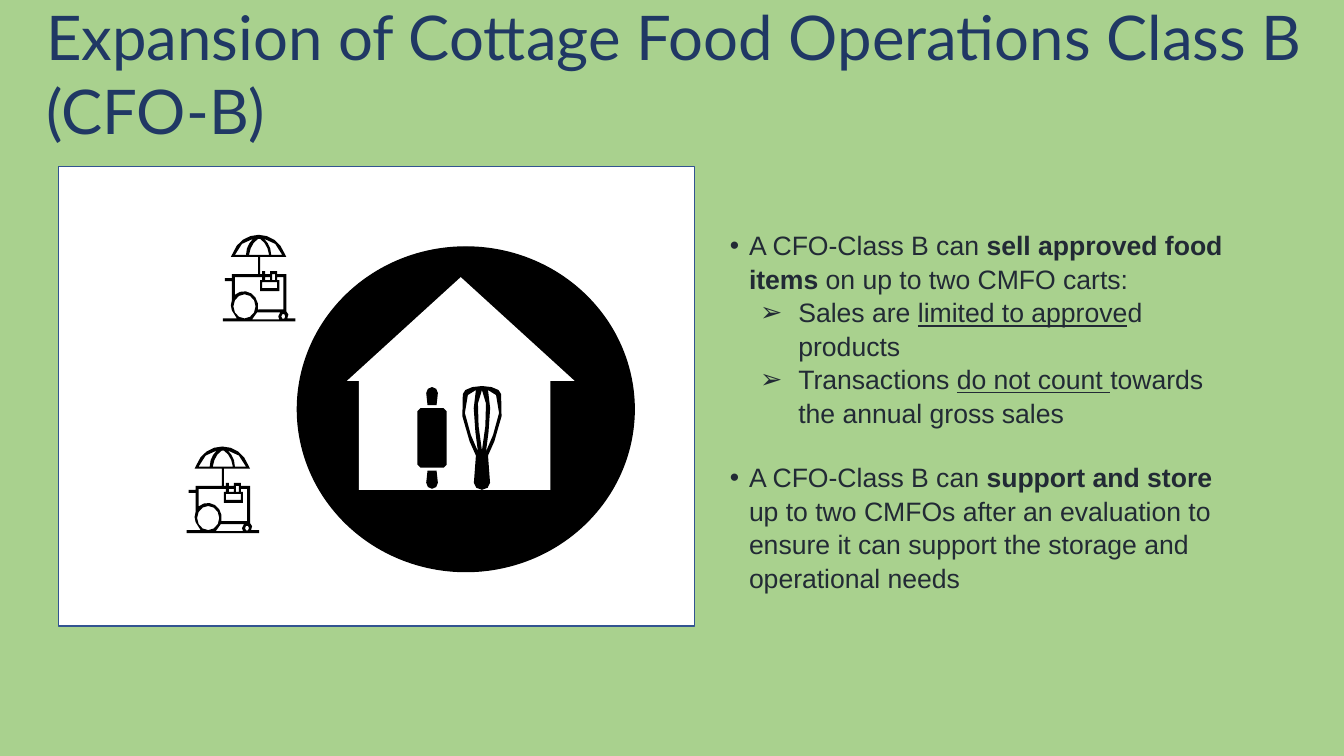
from math import cos, radians, sin

from lxml.etree import SubElement
from pptx import Presentation
from pptx.dml.color import RGBColor as RGB
from pptx.enum.shapes import MSO_SHAPE as SHAPE
from pptx.enum.text import MSO_AUTO_SIZE as AUTO
from pptx.oxml.ns import qn
from pptx.util import Pt

CELL = 9144  # the grid has 100 columns and 100 rows to the inch
FINE = 100   # outline points per grid cell
BENDS = 3    # straight pieces per curve

THEME = {
    "page": RGB.from_string("A9D18E"),
    "white": RGB.from_string("FFFFFF"),
    "black": RGB.from_string("000000"),
    "frame": RGB.from_string("325491"),
    "title": {"name": "Lato", "size": Pt(44), "color": RGB.from_string("203864")},
    "body": {"name": "Arial", "size": Pt(19), "color": RGB.from_string("222A35")},
}

prs = Presentation()
prs.slide_width, prs.slide_height = 1333 * CELL, 750 * CELL
s = prs.slides.add_slide(prs.slide_layouts[6])
s.background.fill.solid()
s.background.fill.fore_color.rgb = THEME["page"]


def arc(cx, cy, rx, ry, start, end, steps):
    """Points along an ellipse, clockwise from the right in degrees."""
    turns = [radians(start + (end - start) * i / steps) for i in range(steps + 1)]
    return [(cx + rx * cos(t), cy + ry * sin(t)) for t in turns]


def silhouette(left, top, contours):
    """Black shape from contours of points (x, y) and cubic curves (six numbers)."""
    builder = None
    for contour in contours:
        pts = []
        for step in contour:
            if len(step) == 2:
                pts.append(step)
                continue
            x0, y0 = pts[-1]
            x1, y1, x2, y2, x3, y3 = step
            for i in range(1, BENDS + 1):
                t = i / BENDS
                a, b, c, d = (1 - t) ** 3, 3 * t * (1 - t) ** 2, 3 * t * t * (1 - t), t ** 3
                pts.append((a * x0 + b * x1 + c * x2 + d * x3,
                            a * y0 + b * y1 + c * y2 + d * y3))
        pts = [(x * FINE, y * FINE) for x, y in pts]
        if builder is None:
            builder = s.shapes.build_freeform(*pts[0], scale=CELL / FINE)
        else:
            builder.move_to(*pts[0])
        builder.add_line_segments(pts[1:], close=False)
    sp = builder.convert_to_shape(left * CELL, top * CELL)
    sp.shadow.inherit = False
    sp.fill.solid()
    sp.fill.fore_color.rgb = THEME["black"]
    sp.line.fill.background()


# House in a circle on a framed panel
for kind, box, fill, line in [
    (SHAPE.RECTANGLE, (58, 165, 631, 456), "white", "frame"),
    (SHAPE.OVAL, (295, 245, 334, 322), "black", "black"),
    (SHAPE.RECTANGLE, (356, 373, 190, 113), "white", None),
    (SHAPE.ISOSCELES_TRIANGLE, (344, 275, 226, 103), "white", None),
]:
    sp = s.shapes.add_shape(kind, *(n * CELL for n in box))
    sp.shadow.inherit = False
    sp.fill.solid()
    sp.fill.fore_color.rgb = THEME[fill]
    if line:
        sp.line.color.rgb = THEME[line]
        sp.line.width = Pt(1)
    else:
        sp.line.fill.background()

# Rolling pin and whisk
pin = [(0, 25), (3, 22), (26, 22), (29, 25), (29, 78), (26, 81), (3, 81), (0, 78)]
handle = [(10, 19), *arc(14.5, 7, 5.8, 6, 180, 360, 4), (19, 19)]
handle_low = [(x, 103 - y) for x, y in handle]
whisk = [*arc(64, 8, 19, 8, 180, 360, 6), (90, 24, 73, 65, 70, 69),
         *arc(64, 96, 8, 7, 0, 180, 4), (58, 69), (55, 65, 38, 24, 45, 8)]
gap_left = [(60, 65), (58, 51, 53, 16, 58, 4), (50, 9), (40, 22, 55, 54, 60, 65)]
gap_right = [tuple(128 - n if i % 2 == 0 else n for i, n in enumerate(step))
             for step in gap_left]
gap_mid = [(64, 4), (57, 10, 60, 42, 64, 64), (68, 42, 71, 10, 64, 4)]
silhouette(414, 383, [pin, handle, handle_low, whisk, gap_left, gap_right, gap_mid])

# Food carts
outline = [(64, 83), (65, 79), (63, 76), (63, 39), (54, 39), (54, 36), (47, 36), (47, 39),
           (42, 39), (42, 36), (39, 36), (39, 39), (37, 39), (37, 22), (63, 22),
           *arc(35.5, 27, 27, 27, -19.5, -160.5, 8), (8, 22), (35, 22), (35, 39), (9, 39),
           (9, 43), (2, 43), (2, 46), (9, 46), (9, 65), (8, 70), (9, 75), (14, 83),
           (0, 83), (0, 86), (72, 86), (72, 83)]
panel_right = [(59, 20), (48, 20), (48, 13, 45, 8, 41, 4), (52, 9), (59, 20)]
panel_left = [(71 - 59, 20), (23, 20), (23, 13, 26, 8, 30, 4), (19, 9), (12, 20)]
panel_mid = [(26, 20), (27, 13, 30, 7, 35, 4), (37, 4), (42, 7, 45, 13, 46, 20)]
boxes = [[(l, t), (r, t), (r, b), (l, b)]
         for l, t, r, b in [(49, 39, 52, 45), (39, 47, 54, 53), (42, 42, 47, 45)]]
body = [(12, 42), (39, 42), (39, 45), (37, 45), (37, 56), (56, 56), (56, 45), (54, 45),
        (54, 42), (60, 42), (60, 74), *arc(21, 71, 14, 15, 12, -130, 6)]
axle = [(55, 81), (56, 84), (29, 84), (34, 77), (57, 77)]
wheels = [arc(21.5, 71, 11, 12, 0, 360, 12), arc(60, 81, 2, 2.5, 0, 360, 6)]
for left, top in [(185, 443), (221, 233)]:
    silhouette(left, top, [outline, panel_left, panel_mid, panel_right, *boxes, body,
                           axle, *wheels])

# Title and body text: each paragraph is (indent, hanging, bullet, space before, runs)
title = [(0, 0, None, 0, [("Expansion of Cottage Food Operations Class B (CFO-B)", {})])]
bold, under = {"bold": True}, {"underline": True}
rules = [
    (19, 19, "•", 0, [("A CFO-Class B can ", {}), ("sell approved food items ", bold),
                      ("on up to two CMFO carts:", {})]),
    (68, 38, "➢", 0, [("Sales are ", {}), ("limited to approve", under),
                      ("d products", {})]),
    (68, 38, "➢", 0, [("Transactions ", {}), ("do not count ", under),
                      ("towards the annual gross sales", {})]),
    (19, 19, "•", 22, [("A CFO-Class B can ", {}), ("support and store ", bold),
                       ("up to two CMFOs after an evaluation to ensure it can support "
                        "the storage and operational needs", {})]),
]
for box, style, spacing, paragraphs in [
    ((36, -6, 1280, 158), "title", 1.0, title),
    ((714, 221, 522, 392), "body", 1.05, rules),
]:
    tf = s.shapes.add_textbox(*(n * CELL for n in box)).text_frame
    tf.word_wrap = True
    tf.auto_size = AUTO.SHAPE_TO_FIT_TEXT
    for i, (indent, hanging, bullet, before, runs) in enumerate(paragraphs):
        p = tf.add_paragraph() if i else tf.paragraphs[0]
        p.line_spacing = spacing
        p.space_before = Pt(before)
        if bullet:
            pPr = p._p.get_or_add_pPr()
            pPr.set("marL", str(indent * CELL))
            pPr.set("indent", str(-hanging * CELL))
            SubElement(pPr, qn("a:buFont"), typeface="Arial")
            SubElement(pPr, qn("a:buChar"), char=bullet)
        for text, extra in runs:
            r = p.add_run()
            r.text = text
            for name, value in {**THEME[style], **extra}.items():
                if name == "color":
                    r.font.color.rgb = value
                else:
                    setattr(r.font, name, value)

prs.save("out.pptx")
